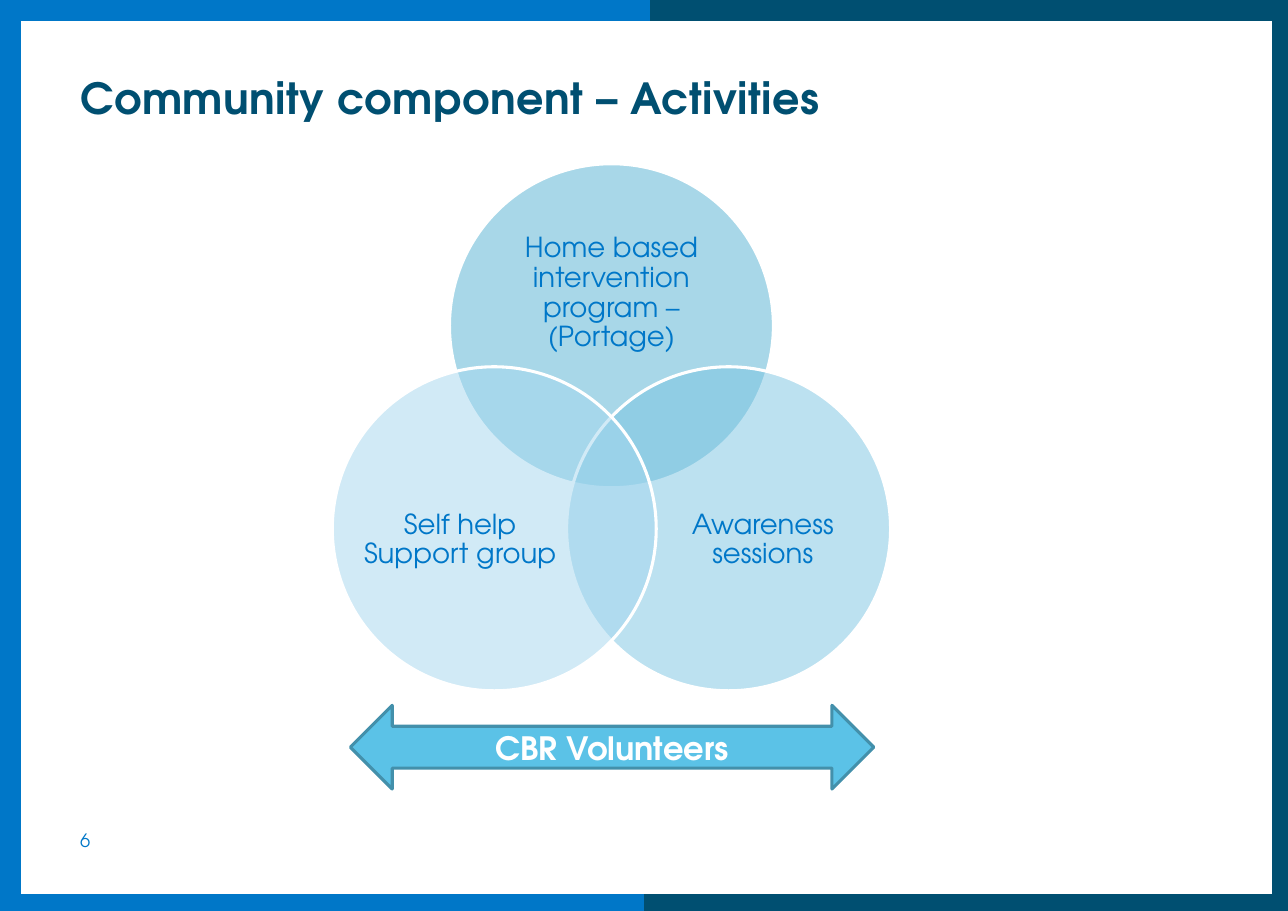
"""Build the slide on the activities of the community component."""
import math

import pptx
import pptx.util
import pptx.dml.color
import pptx.enum.shapes
import pptx.enum.text
import pptx.oxml.ns
from lxml import etree

Cm, Pt = pptx.util.Cm, pptx.util.Pt
ALIGN = pptx.enum.text.PP_ALIGN
ANCHOR = pptx.enum.text.MSO_ANCHOR
SHAPE = pptx.enum.shapes.MSO_SHAPE
qn = pptx.oxml.ns.qn

COLORS = {
    "navy": "004F71", "blue": "0077C8", "white": "FFFFFF",
    "teal": "53B0D2", "sky": "7AC4E2", "pale": "A5D7EF",
    "arrow": "5BC2E7", "arrow_edge": "4390AB",
}


def rgb(name):
    """Return the named colour."""
    return pptx.dml.color.RGBColor.from_string(COLORS[name])


class SlideBuilder:
    """Hold the text style and the current slide."""

    font = "TeX Gyre Adventor"

    def __init__(self, deck):
        """Add a title-only slide to the deck."""
        self.page = deck.slides.add_slide(deck.slide_layouts[5])

    def fill_text(self, box, text, size, color, align=ALIGN.LEFT, anchor=ANCHOR.TOP, bold=False):
        """Put one formatted paragraph in a box and return it."""
        frame = box.text_frame
        frame.text = text
        frame.word_wrap = True
        frame.auto_size = pptx.enum.text.MSO_AUTO_SIZE.NONE
        frame.vertical_anchor = anchor
        para = frame.paragraphs[0]
        para.alignment = align
        font = para.runs[0].font
        font.name, font.size, font.bold = self.font, Pt(size), bold
        font.color.rgb = rgb(color)
        return para

    def title(self, text, left, top, width, height):
        """Move and fill the title placeholder."""
        box = self.page.shapes.title
        box.left, box.top, box.width, box.height = map(Cm, (left, top, width, height))
        para = self.fill_text(box, text, 28, "navy", bold=True)
        para.space_before = Pt(0)
        para.runs[0]._r.get_or_add_rPr().set("spc", "30")

    def text(self, text, left, top, width, height, size):
        """Add a plain text box."""
        box = self.page.shapes.add_textbox(*map(Cm, (left, top, width, height)))
        self.fill_text(box, text, size, "blue")

    def label(self, text, center_x, center_y, width, height):
        """Add a centred label without margins."""
        box = self.page.shapes.add_textbox(
            Cm(center_x - width / 2), Cm(center_y - height / 2), Cm(width), Cm(height))
        para = self.fill_text(box, text, 18, "blue", ALIGN.CENTER, ANCHOR.MIDDLE)
        para.line_spacing = 0.9
        frame = box.text_frame
        frame.margin_left = frame.margin_right = frame.margin_top = frame.margin_bottom = 0

    def shape(self, kind, left, top, width, height, fill, line):
        """Add a filled and outlined preset shape."""
        shape = self.page.shapes.add_shape(kind, *map(Cm, (left, top, width, height)))
        shape.shadow.inherit = False
        shape.fill.solid()
        shape.fill.fore_color.rgb = rgb(fill)
        shape.line.color.rgb = rgb(line)
        shape.line.width = Pt(2)
        return shape

    def circle(self, center_x, center_y, diameter, fill):
        """Add a half-transparent circle."""
        circle = self.shape(SHAPE.OVAL, center_x - diameter / 2, center_y - diameter / 2,
                            diameter, diameter, fill, "white")
        color = circle._element.spPr.find(qn("a:solidFill"))[0]
        etree.SubElement(color, qn("a:alpha")).set("val", "50000")

    def border(self, x1, y1, x2, y2, color):
        """Add one thick line of the page frame."""
        line = self.page.shapes.add_connector(
            pptx.enum.shapes.MSO_CONNECTOR.STRAIGHT, *map(Cm, (x1, y1, x2, y2)))
        line.line.color.rgb = rgb(color)
        line.line.width = Pt(15)
        etree.SubElement(line._element.spPr, qn("a:effectLst"))


def main():
    """Build and save the slide."""
    deck = pptx.Presentation()
    deck.slide_width, deck.slide_height = Cm(29.7), Cm(21)
    slide = SlideBuilder(deck)

    top, bottom, left, right = 0.23, 20.88, 0.23, 29.59
    for y, seam in ((bottom, 14.85), (top, 14.98)):
        slide.border(29.85, y, 14.83, y, "navy")
        slide.border(-0.03, y, seam, y, "blue")
    slide.border(right, 21.06, right, top, "navy")
    slide.border(left, 0.05, left, bottom, "blue")

    slide.text("6", 1.6, 19, 3.76, 0.76, 12)
    slide.title("Community component – Activities", 1.6, 1.52, 26.5, 3.25)

    middle_x, middle_y, orbit, diameter = 14.1, 10.63, 3.12, 7.47
    activities = (
        ("Home based intervention program – (Portage)", "teal", 0, 6.76, 5.49, 3.35),
        ("Awareness sessions", "sky", 3.49, 12.45, 4.5, 4.11),
        ("Self help Support group", "pale", -3.49, 12.45, 4.5, 4.11),
    )
    for index, (text, fill, shift, label_y, width, height) in enumerate(activities):
        angle = math.radians(120 * index - 90)
        slide.circle(middle_x + orbit * math.cos(angle), middle_y + orbit * math.sin(angle),
                     diameter, fill)
        slide.label(text, middle_x + shift, label_y, width, height)

    arrow = slide.shape(SHAPE.LEFT_RIGHT_ARROW, 8.08, 16.26, 12.07, 1.93, "arrow", "arrow_edge")
    slide.fill_text(arrow, "CBR Volunteers", 21, "white", ALIGN.CENTER, ANCHOR.MIDDLE, True)

    deck.save("out.pptx")


if __name__ == "__main__":
    main()
